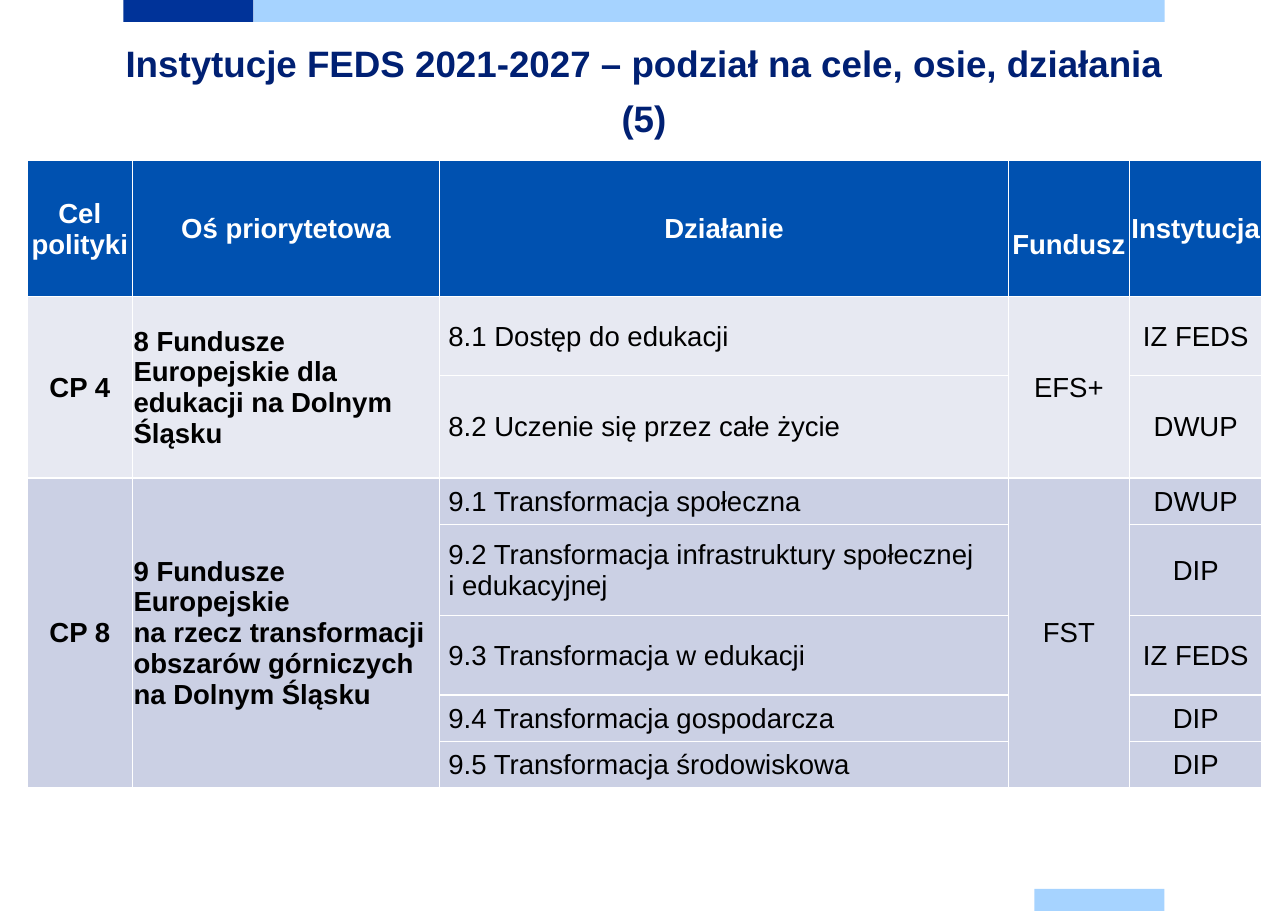
from lxml.etree import SubElement
from pptx import Presentation
from pptx.dml.color import RGBColor
from pptx.enum.shapes import MSO_SHAPE
from pptx.enum.text import MSO_ANCHOR, MSO_AUTO_SIZE, PP_ALIGN
from pptx.oxml.ns import qn
from pptx.util import Inches, Pt

COLORS = {
    "navy": "003399", "sky": "A6D3FF", "title": "002073", "header": "0051B0",
    "pale": "E7E9F2", "lavender": "CBD0E4", "white": "FFFFFF", "black": "000000",
}
WIDTH, HEIGHT = 11.69, 8.27
MARGIN = 1.12
COLUMN = (WIDTH - 2 * MARGIN) / 8
ROW = 0.2
LAST_ROW = HEIGHT / ROW - 1

HEADERS = ["Cel\npolityki", "Oś priorytetowa", "Działanie", "Fundusz", "Instytucja"]
GROUPS = [
    ("CP 4", "8 Fundusze Europejskie dla edukacji na Dolnym Śląsku", "EFS+", "pale", [
        ("8.1 Dostęp do edukacji", "IZ FEDS"),
        ("8.2 Uczenie się przez całe życie", "DWUP"),
    ]),
    ("CP 8", "9 Fundusze Europejskie\vna rzecz transformacji obszarów górniczych\v"
             "na Dolnym Śląsku", "FST", "lavender", [
        ("9.1 Transformacja społeczna", "DWUP"),
        ("9.2 Transformacja infrastruktury społecznej\vi edukacyjnej", "DIP"),
        ("9.3 Transformacja w edukacji", "IZ FEDS"),
        ("9.4 Transformacja gospodarcza", "DIP"),
        ("9.5 Transformacja środowiskowa", "DIP"),
    ]),
]
# Sizes in grid columns and grid rows
TABLE_COLUMNS = [0.81, 2.36, 4.37, 0.93, 1.02]
TABLE_ROWS = [6.15, 3.6, 4.65, 2.1, 4.15, 3.6, 2.1, 2.1]


def color(name):
    return RGBColor.from_string(COLORS[name])


class SlideBuilder:
    """Places elements on one slide by grid column and row."""

    font = "Arial"

    def __init__(self, presentation):
        self.slide = presentation.slides.add_slide(presentation.slide_layouts[5])

    def box(self, column, row, columns, rows):
        """Convert a grid area to left, top, width and height."""
        return (Inches(MARGIN + column * COLUMN), Inches(row * ROW),
                Inches(columns * COLUMN), Inches(rows * ROW))

    def style(self, paragraph, size, color_name, bold, alignment):
        paragraph.alignment = alignment
        for run in paragraph.runs:
            run.font.name = self.font
            run.font.size = Pt(size)
            run.font.bold = bold
            run.font.color.rgb = color(color_name)

    def bar(self, column, row, columns, fill):
        shape = self.slide.shapes.add_shape(
            MSO_SHAPE.RECTANGLE, *self.box(column, row, columns, 1))
        shape.shadow.inherit = False
        shape.fill.solid()
        shape.fill.fore_color.rgb = color(fill)
        shape.line.fill.background()

    def title(self, text, *area):
        shape = self.slide.shapes.title
        shape.left, shape.top, shape.width, shape.height = self.box(*area)
        frame = shape.text_frame
        frame.text = text
        frame.word_wrap = True
        frame.auto_size = MSO_AUTO_SIZE.NONE
        frame.vertical_anchor = MSO_ANCHOR.TOP
        frame.margin_left = frame.margin_right = 0
        frame.margin_top = frame.margin_bottom = 0
        paragraph = frame.paragraphs[0]
        paragraph.line_spacing = Pt(36)
        paragraph.space_before = Pt(0)
        self.style(paragraph, 24, "title", True, PP_ALIGN.CENTER)

    def table(self, column, row, widths, heights):
        area = self.box(column, row, sum(widths), sum(heights))
        table = self.slide.shapes.add_table(len(heights), len(widths), *area).table
        for table_column, width in zip(table.columns, widths):
            table_column.width = Inches(width * COLUMN)
        for table_row, height in zip(table.rows, heights):
            table_row.height = Inches(height * ROW)
        return table

    def cell(self, cell, fill, text="", text_color="black", bold=False,
             alignment=PP_ALIGN.CENTER, indent=0.01, drop=0.01):
        self.borders(cell)
        cell.fill.solid()
        cell.fill.fore_color.rgb = color(fill)
        cell.vertical_anchor = MSO_ANCHOR.MIDDLE
        cell.margin_left, cell.margin_right = Inches(indent), Inches(0.01)
        cell.margin_top, cell.margin_bottom = Inches(drop), 0
        cell.text_frame.text = text
        for paragraph in cell.text_frame.paragraphs:
            self.style(paragraph, 18, text_color, bold, alignment)

    def borders(self, cell):
        properties = cell._tc.get_or_add_tcPr()
        for side in ("a:lnL", "a:lnR", "a:lnT", "a:lnB"):
            line = SubElement(properties, qn(side), w=str(Pt(1)))
            fill = SubElement(line, qn("a:solidFill"))
            SubElement(fill, qn("a:srgbClr"), val=COLORS["white"])


def fill_group(builder, table, first, group):
    """Fill one policy goal and return the row after it."""
    goal, axis, fund, fill, actions = group
    last = first + len(actions) - 1
    for row, (action, institution) in enumerate(actions, first):
        top = row == first
        builder.cell(table.cell(row, 0), fill, goal if top else "", bold=True)
        builder.cell(table.cell(row, 1), fill, axis if top else "", bold=True,
                     alignment=PP_ALIGN.LEFT)
        builder.cell(table.cell(row, 2), fill, action,
                     alignment=PP_ALIGN.LEFT, indent=0.08)
        builder.cell(table.cell(row, 3), fill, fund if top else "")
        builder.cell(table.cell(row, 4), fill, institution)
    for column in (0, 1, 3):
        table.cell(first, column).merge(table.cell(last, column))
    return last + 1


def main():
    presentation = Presentation()
    presentation.slide_width, presentation.slide_height = Inches(WIDTH), Inches(HEIGHT)
    builder = SlideBuilder(presentation)
    builder.bar(0, 0, 1, "navy")
    builder.bar(1, 0, 7, "sky")
    builder.bar(7, LAST_ROW, 1, "sky")
    builder.title("Instytucje FEDS 2021-2027 – podział na cele, osie, działania (5)",
                  0, 1.35, 8, 5.1)

    table = builder.table(-0.74, 7.3, TABLE_COLUMNS, TABLE_ROWS)
    for column, header in enumerate(HEADERS):
        builder.cell(table.cell(0, column), "header", header, "white", bold=True,
                     drop=0.29 if header == "Fundusz" else 0.01)
    row = 1
    for group in GROUPS:
        row = fill_group(builder, table, row, group)
    presentation.save("out.pptx")


if __name__ == "__main__":
    main()
